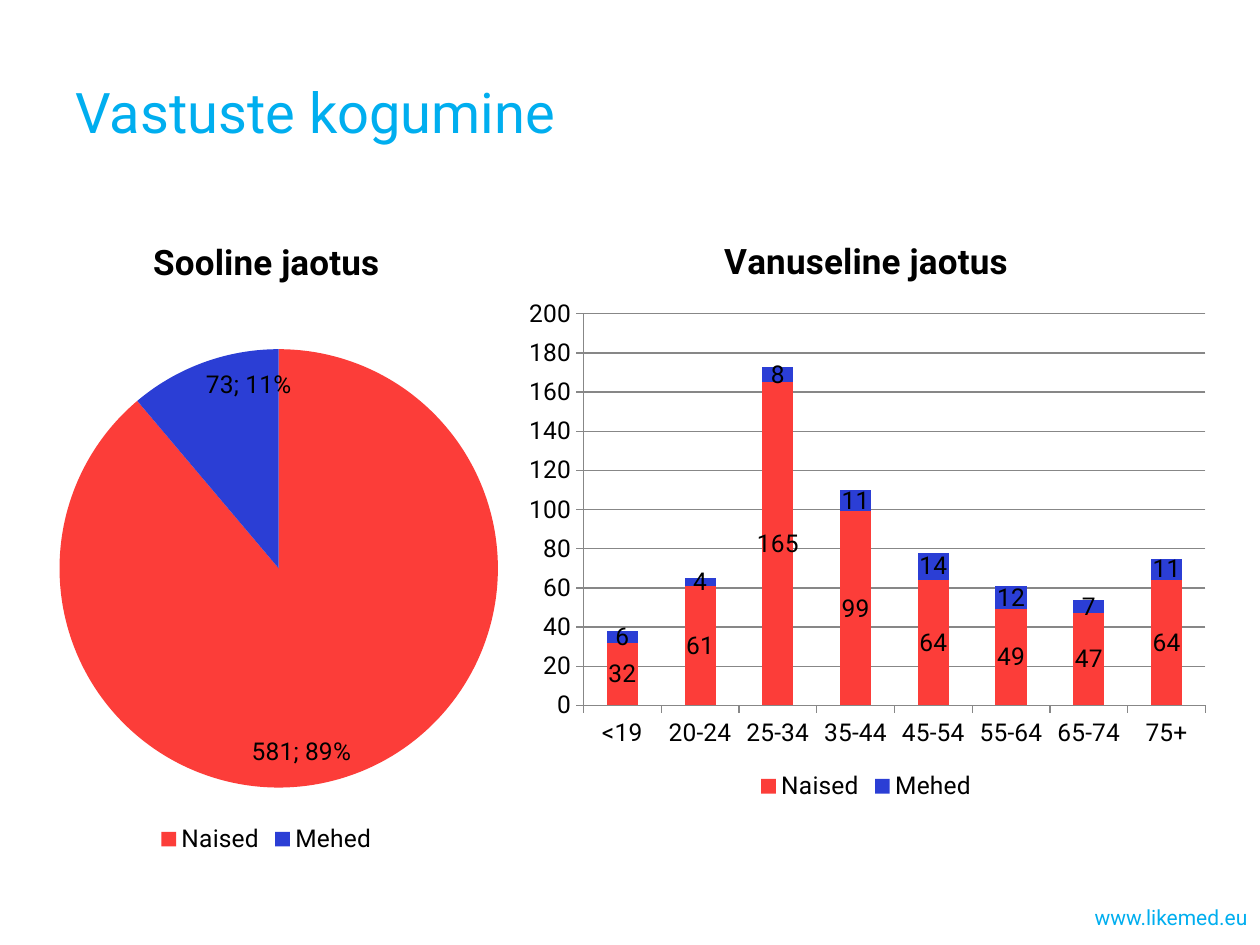
from lxml import etree
from pptx import Presentation
from pptx import util as u
from pptx.chart.data import CategoryChartData
from pptx.dml.color import RGBColor
from pptx.enum import chart as ch, text as tx
from pptx.oxml.ns import qn

# Content
TITLE = "Vastuste kogumine"
SITE = "www.likemed.eu"
SEX = {
    "title": "Sooline jaotus",
    "cats": ["Naised", "Mehed"],
    "series": {"Series 1": [581, 73]},
}
AGE = {
    "title": "Vanuseline jaotus",
    "cats": ["<19", "20-24", "25-34", "35-44", "45-54", "55-64", "65-74", "75+"],
    "series": {
        "Naised": [32, 61, 165, 99, 64, 49, 47, 64],
        "Mehed": [6, 4, 8, 11, 14, 12, 7, 11],
    },
}
THEME = {
    "font": "Roboto", "accent": "00AEEF", "ink": "000000", "grid": "878787",
    "parts": ["FC3D39", "2B3ED5"],
    "title": 32, "head": 20, "body": 14, "foot": 12,
}


def style(font, size, color, bold=False):
    font.name, font.size, font.bold = THEME["font"], u.Pt(size), bold
    font.color.rgb = RGBColor.from_string(color)


def write(slide, words, box, size, color=THEME["accent"], align=tx.PP_ALIGN.LEFT):
    frame = slide.shapes.add_textbox(*map(u.Inches, box)).text_frame
    frame.word_wrap = True
    frame.vertical_anchor = tx.MSO_ANCHOR.MIDDLE
    para = frame.paragraphs[0]
    para.alignment = align
    run = para.add_run()
    run.text = words
    style(run.font, size, color)


def paint(part, color):
    part.format.fill.solid()
    part.format.fill.fore_color.rgb = RGBColor.from_string(color)


def place(chart, **area):
    """Fix the inner plot area, as fractions of the chart."""
    plot = chart._chartSpace.chart.plotArea
    for old in plot.findall(qn("c:layout")):
        plot.remove(old)
    layout = etree.Element(qn("c:layout"))
    manual = etree.SubElement(layout, qn("c:manualLayout"))
    modes = {"layoutTarget": "inner", "xMode": "edge", "yMode": "edge"}
    for tag, val in {**modes, **area}.items():
        etree.SubElement(manual, qn("c:" + tag)).set("val", str(val))
    plot.insert(0, layout)


def draw(slide, kind, info, box):
    """Add a chart with its heading, legend and value labels."""
    data = CategoryChartData()
    data.categories = info["cats"]
    for name, vals in info["series"].items():
        data.add_series(name, vals)
    chart = slide.shapes.add_chart(kind, *map(u.Inches, box), data).chart
    style(chart.font, THEME["body"], THEME["ink"])
    chart.has_title = True
    head = chart.chart_title.text_frame
    head.text = info["title"]
    style(head.paragraphs[0].runs[0].font, THEME["head"], THEME["ink"], True)
    chart.has_legend = True
    chart.legend.position = ch.XL_LEGEND_POSITION.BOTTOM
    chart.legend.include_in_layout = False
    plot = chart.plots[0]
    for row in plot.series:
        labels = row.data_labels
        labels.show_value = True
        style(labels.font, THEME["body"], THEME["ink"])
    return chart, plot


def main():
    deck = Presentation()
    deck.slide_width, deck.slide_height = u.Inches(10), u.Inches(7.5)
    slide = deck.slides.add_slide(deck.slide_layouts[6])

    # Title and site address
    write(slide, TITLE, (0.5, 0.08, 9, 1.61), THEME["title"])
    write(slide, SITE, (6.83, 7.08, 3.17, 0.4), THEME["foot"],
          align=tx.PP_ALIGN.RIGHT)

    # Pie: split by sex
    pie, plot = draw(slide, ch.XL_CHART_TYPE.PIE, SEX, (0.16, 1.69, 3.91, 5.13))
    plot.vary_by_categories = True
    row = plot.series[0]
    for i, color in enumerate(THEME["parts"]):
        paint(row.points[i], color)
    labels = row.data_labels
    labels.show_percentage = True
    labels.position = ch.XL_LABEL_POSITION.INSIDE_END
    mark = etree.Element(qn("c:separator"))
    mark.text = "; "
    labels._element.find(qn("c:showBubbleSize")).addnext(mark)
    place(pie, x=0.08, y=0.21, w=0.89, h=0.68)

    # Stacked columns: split by age
    bars, plot = draw(slide, ch.XL_CHART_TYPE.COLUMN_STACKED, AGE,
                      (4.07, 1.69, 5.61, 4.71))
    plot.vary_by_categories = False
    plot.gap_width, plot.overlap = 150, 100
    for row, color in zip(plot.series, THEME["parts"]):
        paint(row, color)
        row.data_labels.position = ch.XL_LABEL_POSITION.CENTER
    axis = bars.value_axis
    axis.minimum_scale, axis.maximum_scale, axis.major_unit = 0, 200, 20
    axis.has_major_gridlines = True
    for part in (axis, bars.category_axis, axis.major_gridlines):
        part.format.line.color.rgb = RGBColor.from_string(THEME["grid"])
        part.format.line.width = u.Pt(0.75)
    for part in (axis, bars.category_axis):
        part.major_tick_mark = ch.XL_TICK_MARK.OUTSIDE
        style(part.tick_labels.font, THEME["body"], THEME["ink"])
    place(bars, x=0.1, y=0.17, w=0.88, h=0.66)

    deck.save("out.pptx")


if __name__ == "__main__":
    main()
